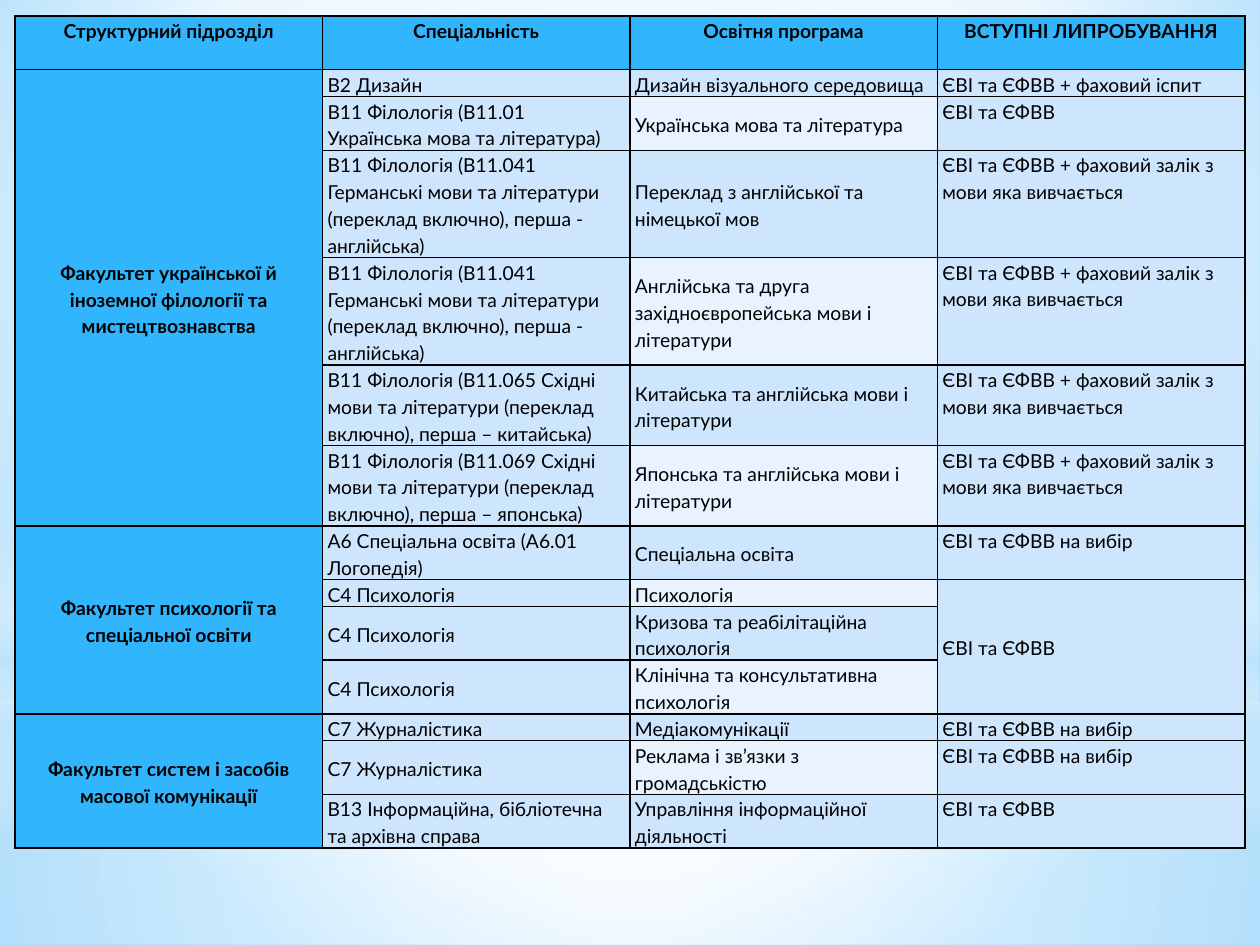
from lxml import etree
from pptx import Presentation
from pptx.dml.color import RGBColor
from pptx.enum.shapes import MSO_SHAPE
from pptx.enum.text import MSO_ANCHOR, PP_ALIGN
from pptx.oxml.ns import qn
from pptx.util import Inches, Pt

RECTANGLE, OVAL = MSO_SHAPE.RECTANGLE, MSO_SHAPE.OVAL
TOP, MIDDLE = MSO_ANCHOR.TOP, MSO_ANCHOR.MIDDLE
LEFT, CENTER = PP_ALIGN.LEFT, PP_ALIGN.CENTER

BLACK = RGBColor(0x00, 0x00, 0x00)
WHITE = RGBColor(0xFF, 0xFF, 0xFF)
BRIGHT = RGBColor(0x31, 0xB6, 0xFD)
LIGHT = RGBColor(0xCE, 0xE5, 0xFE)
PALE = RGBColor(0xE8, 0xF3, 0xFF)
SKY = RGBColor(0xB0, 0xE0, 0xFF)
DEEP_SKY = RGBColor(0x6B, 0xC5, 0xFF)
HAZE = RGBColor(0xC6, 0xE7, 0xFC)

CENTRE_FOCUS = (50, 50, 50, 50)
LINE_HEIGHT = 0.213

HEADINGS = ["Структурний підрозділ", "Спеціальність", "Освітня програма", "ВСТУПНІ ЛИПРОБУВАННЯ"]
GERMANIC = "B11 Філологія (В11.041 Германські мови та літератури (переклад включно), перша - англійська)"
ORIENTAL = "B11 Філологія (В11.{} Східні мови та літератури (переклад включно), перша – {})"
BASIC = "ЄВІ та ЄФВВ"
CHOICE = BASIC + " на вибір"
EXAM = BASIC + " + фаховий іспит"
LANGUAGE_TEST = BASIC + " + фаховий залік з мови яка вивчається"

FACULTIES = [
    ("Факультет української й іноземної філології та мистецтвознавства", [
        ("В2 Дизайн", "Дизайн візуального середовища", EXAM, 1),
        ("В11 Філологія (B11.01 Українська мова та література)",
         "Українська мова та література", BASIC, 2),
        (GERMANIC, "Переклад з англійської та німецької мов", LANGUAGE_TEST, 4),
        (GERMANIC, "Англійська та друга західноєвропейська мови і літератури", LANGUAGE_TEST, 4),
        (ORIENTAL.format("065", "китайська"),
         "Китайська та англійська мови і літератури", LANGUAGE_TEST, 3),
        (ORIENTAL.format("069", "японська"),
         "Японська та англійська мови і літератури", LANGUAGE_TEST, 3),
    ]),
    ("Факультет психології та спеціальної освіти", [
        ("А6 Спеціальна освіта (A6.01 Логопедія)", "Спеціальна освіта", CHOICE, 2),
        ("С4 Психологія", "Психологія", BASIC, 1),
        ("С4 Психологія", "Кризова та реабілітаційна психологія", "", 2),
        ("С4 Психологія", "Клінічна та консультативна психологія", "", 2),
    ]),
    ("Факультет систем і засобів масової комунікації", [
        ("С7 Журналістика", "Медіакомунікації", CHOICE, 1),
        ("С7 Журналістика", "Реклама і зв’язки з громадськістю", CHOICE, 2),
        ("В13 Інформаційна, бібліотечна та архівна справа",
         "Управління інформаційної діяльності", BASIC, 2),
    ]),
]


def write(cell, text, bold=False, align=LEFT, anchor=MIDDLE, font="Lato", size=11):
    cell.vertical_anchor = anchor
    cell.margin_left = cell.margin_right = Inches(0.04)
    cell.margin_top = cell.margin_bottom = 0
    paragraph = cell.text_frame.paragraphs[0]
    paragraph.alignment = align
    paragraph.line_spacing = 1.15
    paragraph.font.size = Pt(size)
    if text:
        run = paragraph.add_run()
        run.text = text
        run.font.name, run.font.size = font, Pt(size)
        run.font.bold = bold
        run.font.color.rgb = BLACK


class Board:
    def __init__(self, deck):
        self.width, self.height = deck.slide_width, deck.slide_height
        self.slide = deck.slides.add_slide(deck.slide_layouts[6])

    def box(self, left, top, width, height):
        return (round(left * self.width), round(top * self.height),
                round(width * self.width), round(height * self.height))

    def blend(self, owner, stops, focus=None):
        gradient = etree.Element(qn("a:gradFill"), rotWithShape="1")
        stop_list = etree.SubElement(gradient, qn("a:gsLst"))
        for position, color, opacity in stops:
            stop = etree.SubElement(stop_list, qn("a:gs"), pos=str(position * 1000))
            tint = etree.SubElement(stop, qn("a:srgbClr"), val=str(color))
            if opacity < 100:
                etree.SubElement(tint, qn("a:alpha"), val=str(opacity * 1000))
        if focus:
            route = etree.SubElement(gradient, qn("a:path"))
            route.set("path", "circle")
            sides = {side: str(share * 1000) for side, share in zip("ltrb", focus)}
            etree.SubElement(route, qn("a:fillToRect"), **sides)
        else:
            etree.SubElement(gradient, qn("a:lin"), ang=str(90 * 60000), scaled="0")
        owner.replace(owner.find(qn("a:solidFill")), gradient)

    def background(self, stops, focus):
        self.slide.background.fill.solid()
        self.blend(self.slide.element.xpath("p:cSld/p:bg/p:bgPr")[0], stops, focus)

    def glow(self, kind, top, height, stops, focus=None):
        shape = self.slide.shapes.add_shape(kind, *self.box(0, top, 1, height))
        shape.shadow.inherit = False
        shape.line.fill.background()
        shape.fill.solid()
        self.blend(shape.element.spPr, stops, focus)

    def border(self, cell, width=1):
        properties = cell._tc.get_or_add_tcPr()
        for side in "LRTB":
            edge = etree.SubElement(properties, qn(f"a:ln{side}"), w=str(Pt(width)))
            paint = etree.SubElement(edge, qn("a:solidFill"))
            etree.SubElement(paint, qn("a:srgbClr"), val=str(BLACK))

    def table(self, left, top, width, row_lines, columns):
        heights = [Inches(LINE_HEIGHT * lines) for lines in row_lines]
        frame = self.slide.shapes.add_table(
            len(heights), columns, *self.box(left, top, width, sum(heights) / self.height))
        grid = frame.table
        grid.first_row = grid.horz_banding = False
        for row, height in zip(grid.rows, heights):
            row.height = height
        for number, row in enumerate(grid.rows):
            for column, cell in enumerate(row.cells):
                self.border(cell)
                cell.fill.solid()
                striped = column == 2 and number % 2 == 0
                cell.fill.fore_color.rgb = (
                    BRIGHT if number == 0 or column == 0 else PALE if striped else LIGHT)
        return grid


def fill_programmes(grid):
    for column, heading in enumerate(HEADINGS):
        write(grid.cell(0, column), heading, bold=True, align=CENTER, anchor=TOP)
    first = 1
    for faculty, programmes in FACULTIES:
        last = first + len(programmes) - 1
        grid.cell(first, 0).merge(grid.cell(last, 0))
        write(grid.cell(first, 0), faculty, bold=True, align=CENTER)
        for row, (speciality, programme, tests, _) in enumerate(programmes, first):
            write(grid.cell(row, 1), speciality)
            write(grid.cell(row, 2), programme)
            write(grid.cell(row, 3), tests, anchor=TOP)
        first = last + 1
    psychology_tests = grid.cell(8, 3)
    psychology_tests.merge(grid.cell(10, 3))
    psychology_tests.vertical_anchor = MIDDLE


def main():
    deck = Presentation()
    deck.slide_width, deck.slide_height = Inches(10), Inches(7.5)
    board = Board(deck)
    board.background([(0, SKY, 100), (60, WHITE, 100), (100, DEEP_SKY, 100)], (20, 10, 20, 60))
    board.glow(RECTANGLE, 0.744, 0.256,
               [(0, WHITE, 91), (37, WHITE, 76), (100, HAZE, 79)], CENTRE_FOCUS)
    board.glow(RECTANGLE, 0, 0.744,
               [(0, WHITE, 89), (48, WHITE, 62), (100, HAZE, 79)], CENTRE_FOCUS)
    board.glow(RECTANGLE, 0.55, 0.333,
               [(0, WHITE, 0), (29, WHITE, 30), (45, HAZE, 40),
                (55, WHITE, 26), (65, HAZE, 60), (100, WHITE, 0)])
    board.glow(OVAL, 0.233, 0.744, [(0, WHITE, 100), (56, WHITE, 0)], CENTRE_FOCUS)
    row_lines = [2] + [entry[-1] for _, programmes in FACULTIES for entry in programmes]
    fill_programmes(board.table(0.012, 0.017, 0.976, row_lines, len(HEADINGS)))
    deck.save("out.pptx")


if __name__ == "__main__":
    main()
